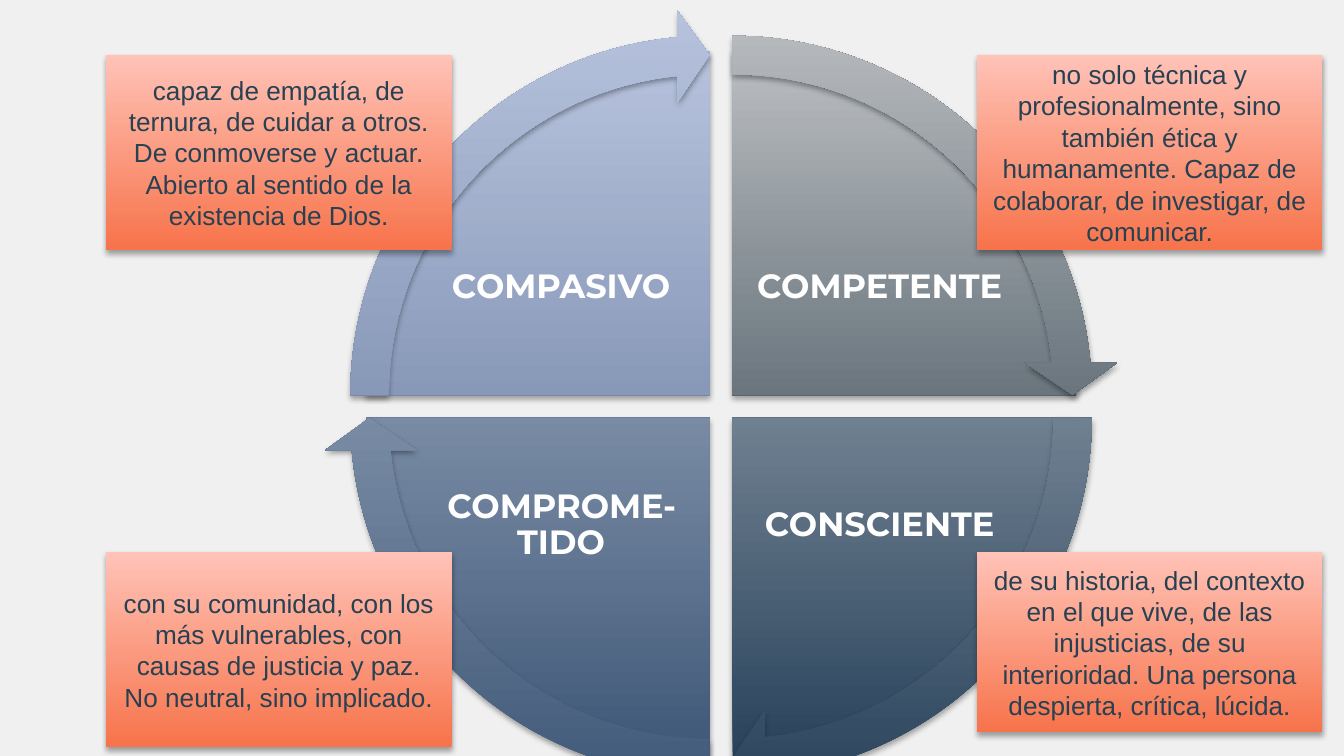
from dataclasses import dataclass

from lxml import etree
from pptx import Presentation
from pptx.dml.color import RGBColor
from pptx.enum.shapes import MSO_SHAPE
from pptx.enum.text import MSO_ANCHOR, PP_ALIGN
from pptx.oxml.ns import qn
from pptx.shapes.autoshape import Shape
from pptx.slide import Slide
from pptx.text.text import TextFrame
from pptx.util import Inches, Pt

PIE = MSO_SHAPE.PIE
CIRCULAR_ARROW = MSO_SHAPE.CIRCULAR_ARROW
RECTANGLE = MSO_SHAPE.RECTANGLE
MIDDLE = MSO_ANCHOR.MIDDLE
CENTER = PP_ALIGN.CENTER

BACKGROUND = RGBColor(0xF0, 0xF0, 0xF0)
WHITE = RGBColor(0xFF, 0xFF, 0xFF)
CARD_TEXT = RGBColor(0x28, 0x41, 0x52)
CARD_DARK = RGBColor(0xF7, 0x73, 0x4B)
CARD_LIGHT = RGBColor(0xFF, 0xC3, 0xB7)
GRAY_DARK = RGBColor(0x16, 0x2B, 0x39)
GRAY_LIGHT = RGBColor(0xBB, 0xBE, 0xC1)
TEAL_DARK = RGBColor(0x28, 0x42, 0x5A)
TEAL_LIGHT = RGBColor(0xB8, 0xBF, 0xC9)
BLUE_DARK = RGBColor(0x3E, 0x57, 0x77)
BLUE_LIGHT = RGBColor(0xB7, 0xC1, 0xD3)
SKY_DARK = RGBColor(0x57, 0x6C, 0x91)
SKY_LIGHT = RGBColor(0xB7, 0xC3, 0xDD)

SLIDE_WIDTH = 10
SLIDE_HEIGHT = SLIDE_WIDTH * 9 / 16
CENTER_COLUMNS = (5.28, 5.45)
CENTER_ROWS = (2.94, 3.11)
LABEL_COLUMNS = (3.23, 5.6)
LABEL_ROWS = (1.44, 3.21)
CARD_COLUMNS = (0.79, 7.27)
CARD_ROWS = (0.41, 4.11)
PIE_SIZE, ARROW_SIZE = 5.12, 5.75
LABEL_WIDTH, LABEL_HEIGHT, LABEL_INSET = 1.89, 1.4, 0.03
CARD_WIDTH = 2.57

ANGLE_UNITS_PER_DEGREE = 0.6
QUARTER_TURN = 90 * ANGLE_UNITS_PER_DEGREE
FULL_TURN = 4 * QUARTER_TURN
ARROW_BAND, ARROW_HEAD_ANGLE, ARROW_HEAD_WIDTH = 0.05, 3.28, 0.06


@dataclass(frozen=True)
class Quadrant:
    column: int
    row: int
    start_degrees: int
    label: str
    detail: str
    dark: RGBColor
    light: RGBColor
    card_height: float = 1.45


QUADRANTS = (
    Quadrant(1, 0, 270, "COMPETENTE",
             "no solo técnica y profesionalmente, sino también ética y humanamente. "
             "Capaz de colaborar, de investigar, de comunicar.", GRAY_DARK, GRAY_LIGHT),
    Quadrant(1, 1, 0, "CONSCIENTE",
             "de su historia, del contexto en el que vive, de las injusticias, de su "
             "interioridad. Una persona despierta, crítica, lúcida.", TEAL_DARK, TEAL_LIGHT, 1.34),
    Quadrant(0, 1, 90, "COMPROME-TIDO",
             "con su comunidad, con los más vulnerables, con causas de justicia y paz. "
             "No neutral, sino implicado.", BLUE_DARK, BLUE_LIGHT),
    Quadrant(0, 0, 180, "COMPASIVO",
             "capaz de empatía, de ternura, de cuidar a otros. De conmoverse y actuar. "
             "Abierto al sentido de la existencia de Dios.", SKY_DARK, SKY_LIGHT),
)


def add_shadow(shape: Shape) -> None:
    shape.shadow.inherit = False
    effects = shape.element.spPr.find(qn("a:effectLst"))
    shadow = etree.SubElement(effects, qn("a:outerShdw"), blurRad=str(Pt(3.1)),
                              dist=str(Pt(1.8)), dir="5400000", rotWithShape="0")
    color = etree.SubElement(shadow, qn("a:srgbClr"), val="000000")
    etree.SubElement(color, qn("a:alpha"), val="35000")


def add_gradient_shape(slide: Slide, kind: MSO_SHAPE, left: float, top: float, width: float,
                       height: float, dark: RGBColor, light: RGBColor) -> Shape:
    shape = slide.shapes.add_shape(kind, Inches(left), Inches(top), Inches(width), Inches(height))
    shape.fill.gradient()
    shape.fill.gradient_angle = 90
    for stop, color, position in zip(shape.fill.gradient_stops, (dark, light), (0, 1)):
        stop.color.rgb = color
        stop.position = position
    shape.line.fill.background()
    add_shadow(shape)
    return shape


def add_round_shape(slide: Slide, kind: MSO_SHAPE, quadrant: Quadrant, size: float,
                    adjustments: tuple[float, ...]) -> None:
    left = CENTER_COLUMNS[quadrant.column] - size / 2
    top = CENTER_ROWS[quadrant.row] - size / 2
    shape = add_gradient_shape(slide, kind, left, top, size, size, quadrant.dark, quadrant.light)
    for index, value in enumerate(adjustments):
        shape.adjustments[index] = value


def write_text(frame: TextFrame, text: str, font_name: str, size: int, color: RGBColor,
               bold: bool = False) -> None:
    frame.word_wrap = True
    frame.vertical_anchor = MIDDLE
    paragraph = frame.paragraphs[0]
    paragraph.text = text
    paragraph.alignment = CENTER
    paragraph.font.name = font_name
    paragraph.font.size = Pt(size)
    paragraph.font.bold = bold
    paragraph.font.color.rgb = color


def add_pie(slide: Slide, quadrant: Quadrant) -> None:
    start = quadrant.start_degrees * ANGLE_UNITS_PER_DEGREE
    add_round_shape(slide, PIE, quadrant, PIE_SIZE, (start, (start + QUARTER_TURN) % FULL_TURN))


def add_label(slide: Slide, quadrant: Quadrant) -> None:
    box = slide.shapes.add_textbox(
        Inches(LABEL_COLUMNS[quadrant.column]), Inches(LABEL_ROWS[quadrant.row]),
        Inches(LABEL_WIDTH), Inches(LABEL_HEIGHT))
    frame = box.text_frame
    frame.margin_left = frame.margin_right = Inches(LABEL_INSET)
    frame.margin_top = frame.margin_bottom = Inches(LABEL_INSET)
    write_text(frame, quadrant.label, "Montserrat", 18, WHITE, bold=True)
    frame.paragraphs[0].line_spacing = 0.9


def add_arrow(slide: Slide, quadrant: Quadrant) -> None:
    start = quadrant.start_degrees * ANGLE_UNITS_PER_DEGREE
    head_start = start + QUARTER_TURN - ARROW_HEAD_ANGLE
    add_round_shape(slide, CIRCULAR_ARROW, quadrant, ARROW_SIZE,
                    (ARROW_BAND, ARROW_HEAD_ANGLE, head_start, start, ARROW_HEAD_WIDTH))


def add_card(slide: Slide, quadrant: Quadrant) -> None:
    card = add_gradient_shape(
        slide, RECTANGLE, CARD_COLUMNS[quadrant.column], CARD_ROWS[quadrant.row],
        CARD_WIDTH, quadrant.card_height, CARD_DARK, CARD_LIGHT)
    write_text(card.text_frame, quadrant.detail, "Arial", 14, CARD_TEXT)


def main() -> None:
    presentation = Presentation()
    presentation.slide_width = Inches(SLIDE_WIDTH)
    presentation.slide_height = Inches(SLIDE_HEIGHT)
    slide = presentation.slides.add_slide(presentation.slide_layouts[6])
    slide.background.fill.solid()
    slide.background.fill.fore_color.rgb = BACKGROUND
    for quadrant in QUADRANTS:
        add_pie(slide, quadrant)
        add_label(slide, quadrant)
    for add_layer in (add_arrow, add_card):
        for quadrant in QUADRANTS:
            add_layer(slide, quadrant)
    presentation.save("out.pptx")


if __name__ == "__main__":
    main()
